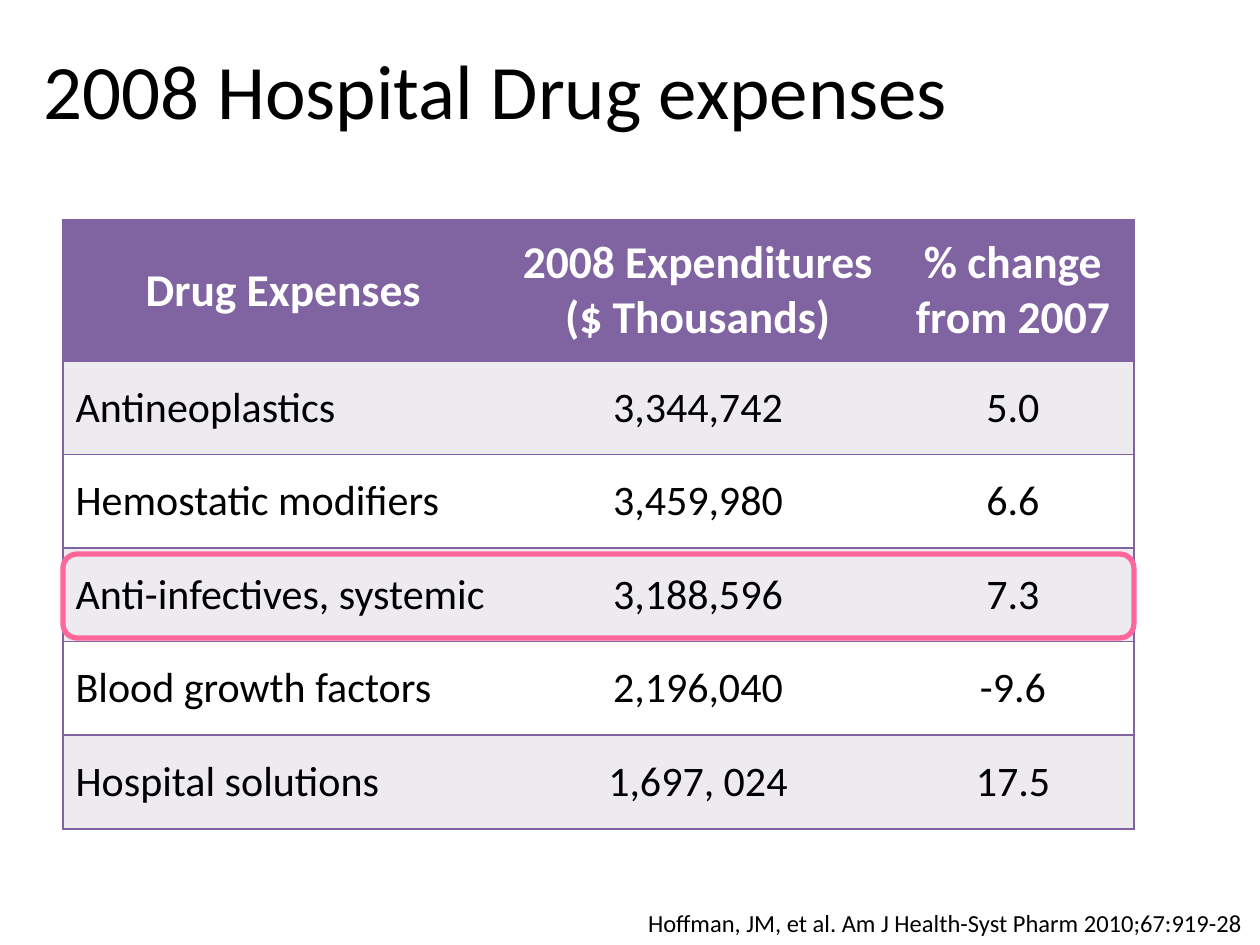
from lxml.etree import SubElement
from pptx import Presentation
from pptx.dml.color import RGBColor
from pptx.enum.shapes import MSO_SHAPE as Shape
from pptx.enum.text import MSO_ANCHOR as Anchor, PP_ALIGN as Align
from pptx.oxml.ns import qn
from pptx.util import Pt

SCALE = 914400 / 126
FONT = "Calibri"
PURPLE, PALE, WHITE, BLACK, PINK = "8064A2", "EDEAF0", "FFFFFF", "000000", "FF6699"
COLS = [441, 388, 242]
HEAD = 141
BODY = 468
ROWS = [
    ["Drug Expenses", "2008 Expenditures\n($ Thousands)", "% change from 2007"],
    ["Antineoplastics", "3,344,742", "5.0"],
    ["Hemostatic modifiers", "3,459,980", "6.6"],
    ["Anti-infectives, systemic", "3,188,596", "7.3"],
    ["Blood growth factors", "2,196,040", "-9.6"],
    ["Hospital solutions", "1,697, 024", "17.5"],
]


def px(n):
    return round(n * SCALE)


def color(code):
    return RGBColor.from_string(code)


def write(frame, text, size, ink=BLACK, bold=False, align=Align.LEFT):
    for i, line in enumerate(text.split("\n")):
        para = frame.add_paragraph() if i else frame.paragraphs[0]
        para.alignment = align
        run = para.add_run()
        run.text = line
        font = run.font
        font.name, font.size, font.bold = FONT, Pt(size), bold
        font.color.rgb = color(ink)


def add_text(slide, box, text, size, wrap=True, anchor=Anchor.TOP, inset=13):
    frame = slide.shapes.add_textbox(*map(px, box)).text_frame
    frame.word_wrap = wrap
    frame.vertical_anchor = anchor
    frame.margin_left = px(inset)
    write(frame, text, size)


def add_edge(cell, side, shown):
    line = SubElement(cell._tc.get_or_add_tcPr(), qn("a:ln" + side), w=str(Pt(1)))
    if shown:
        fill = SubElement(line, qn("a:solidFill"))
        SubElement(fill, qn("a:srgbClr"), val=PURPLE)
    else:
        SubElement(line, qn("a:noFill"))


def add_cell(cell, text, row, col):
    # Edges come before the fill; inner upright rules stay hidden
    shown = {"L": col == 0, "R": col == len(COLS) - 1, "T": True, "B": True}
    for side, on in shown.items():
        add_edge(cell, side, on)
    cell.fill.solid()
    cell.fill.fore_color.rgb = color(PURPLE if row == 0 else PALE if row % 2 else WHITE)
    cell.vertical_anchor = Anchor.MIDDLE
    align = Align.CENTER if row == 0 or col else Align.LEFT
    if row == 0:
        write(cell.text_frame, text, 26, ink=WHITE, bold=True, align=align)
    else:
        write(cell.text_frame, text, 24, align=align)


def add_grid(slide, left, top):
    box = map(px, (left, top, sum(COLS), HEAD + BODY))
    table = slide.shapes.add_table(len(ROWS), len(COLS), *box).table
    for col, width in zip(table.columns, COLS):
        col.width = px(width)
    for r, texts in enumerate(ROWS):
        table.rows[r].height = px(BODY / (len(ROWS) - 1)) if r else px(HEAD)
        for c, text in enumerate(texts):
            add_cell(table.cell(r, c), text, r, c)


def add_frame(slide, box):
    ring = slide.shapes.add_shape(Shape.ROUNDED_RECTANGLE, *map(px, box))
    ring.shadow.inherit = False
    ring.fill.background()
    ring.line.color.rgb = color(PINK)
    ring.line.width = Pt(3)


def main():
    deck = Presentation()
    deck.slide_width, deck.slide_height = px(1260), px(945)
    slide = deck.slides.add_slide(deck.slide_layouts[6])

    # Title
    add_text(slide, (0, 10, 1134, 158), "2008 Hospital Drug expenses", 44,
             anchor=Anchor.MIDDLE, inset=44)
    # Expense table
    add_grid(slide, 63, 220)
    # Citation
    add_text(slide, (635, 902, 625, 43),
             "Hoffman, JM, et al. Am J Health-Syst Pharm 2010;67:919-28", 14, wrap=False)
    # Highlighted row
    add_frame(slide, (63, 554, sum(COLS), 84))

    deck.save("out.pptx")


if __name__ == "__main__":
    main()
